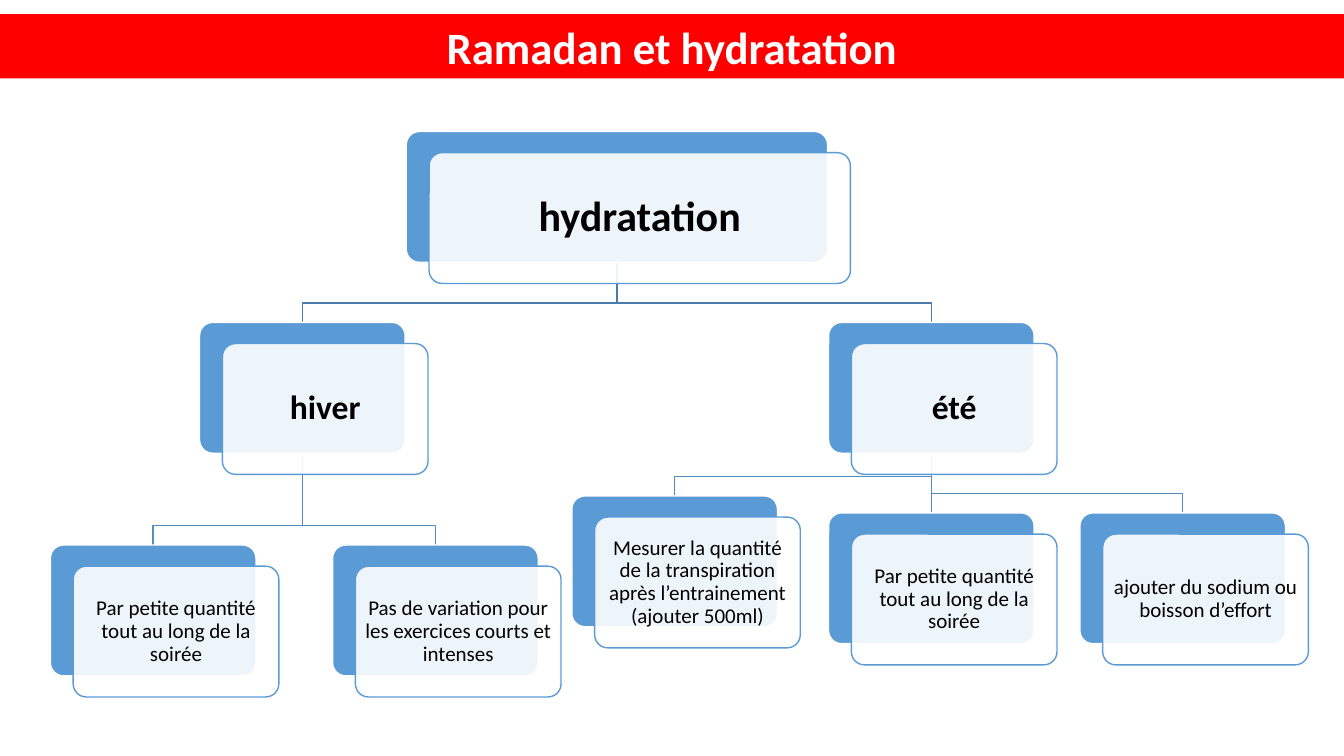
"""Build a slide with a hierarchy chart about hydration during Ramadan."""
from dataclasses import dataclass

from lxml.etree import SubElement
from pptx import Presentation
from pptx.dml.color import RGBColor
from pptx.enum.shapes import MSO_CONNECTOR, MSO_SHAPE
from pptx.enum.text import MSO_ANCHOR, MSO_AUTO_SIZE, PP_ALIGN
from pptx.oxml.ns import qn
from pptx.util import Inches, Pt

TITLE = "Ramadan et hydratation"
SIPS = "Par petite quantité tout au long de la soirée"

# Each node: text, centre column, top row, children (grid of 100 by 100).
TREE = ("hydratation", 45.9, 17.4, [
    ("hiver", 22.5, 42.65, [
        (SIPS, 11.4, 72.1, []),
        ("Pas de variation pour les exercices courts et intenses",
         32.4, 72.1, []),
    ]),
    ("été", 69.3, 42.65, [
        ("Mesurer la quantité de la transpiration après l’entrainement "
         "(ajouter 500ml)", 50.2, 65.6, []),
        (SIPS, 69.3, 67.85, []),
        ("ajouter du sodium ou boisson d’effort", 88, 67.85, []),
    ]),
])


@dataclass(frozen=True)
class Theme:
    """Colours, type sizes and insets by tree level."""
    font: str = "Calibri"
    white: str = "FFFFFF"
    black: str = "000000"
    band: str = "FF0000"
    card: str = "5B9BD5"
    links: tuple = ("497CAB", "538DC1")
    title: int = 32
    sizes: tuple = (30, 24, 15)
    pads: tuple = (0.12, 0.1, 0.06)
    veil: int = 90


LOOK = Theme()
WIDE, HIGH = Inches(13.33), Inches(7.5)
CARD_W = (31.35, 15.3, 15.3)
CARD_H = 17.3
SHIFT_X, SHIFT_Y = 1.7, 2.8
BEND = 2.55


def col(share):
    """Turn a column share into a length."""
    return round(WIDE * share / 100)


def row(share):
    """Turn a row share into a length."""
    return round(HIGH * share / 100)


def color(code):
    """Read a colour code."""
    return RGBColor.from_string(code)


def write(shape, text, size, bold, ink, pad, space):
    """Set centred text in a shape."""
    frame = shape.text_frame
    frame.text = text
    frame.word_wrap = True
    frame.auto_size = MSO_AUTO_SIZE.NONE
    frame.vertical_anchor = MSO_ANCHOR.MIDDLE
    frame.margin_left = frame.margin_right = Inches(pad)
    frame.margin_top = frame.margin_bottom = Inches(pad)
    line = frame.paragraphs[0]
    line.alignment = PP_ALIGN.CENTER
    line.line_spacing = space
    font = line.runs[0].font
    font.name, font.size, font.bold = LOOK.font, Pt(size), bold
    font.color.rgb = color(ink)


def add_title(slide):
    """Turn the title placeholder into the red band."""
    band = slide.shapes.title
    band.left, band.top = 0, row(1.87)
    band.width, band.height = WIDE, row(8.5)
    band.fill.solid()
    band.fill.fore_color.rgb = color(LOOK.band)
    write(band, TITLE, LOOK.title, True, LOOK.white, 0.05, 1.0)


def add_link(shapes, node, child, level):
    """Join a node to its child, with a bend if they are not aligned."""
    x, y = col(node[1]), row(node[2] + CARD_H)
    end_x, end_y = col(child[1]), row(child[2])
    if x == end_x:
        link = shapes.add_connector(MSO_CONNECTOR.STRAIGHT, x, y, x, end_y)
        SubElement(link.element.spPr, qn("a:effectLst"))
    else:
        bend = row(child[2] - BEND)
        path = shapes.build_freeform(x, y)
        path.add_line_segments(
            [(x, bend), (end_x, bend), (end_x, end_y)], close=False)
        link = path.convert_to_shape()
        link.fill.background()
        link.shadow.inherit = False
    link.line.color.rgb = color(LOOK.links[level])
    link.line.width = Pt(1)


def add_links(shapes, node, level=0):
    """Draw the links of a branch, deepest first."""
    for child in reversed(node[3]):
        add_links(shapes, child, level + 1)
    for child in reversed(node[3]):
        add_link(shapes, node, child, level)


def add_card(shapes, x, y, width, fill, edge):
    """Draw one rounded card."""
    card = shapes.add_shape(MSO_SHAPE.ROUNDED_RECTANGLE,
                            col(x), row(y), col(width), row(CARD_H))
    card.adjustments[0] = 0.1
    card.shadow.inherit = False
    card.fill.solid()
    card.fill.fore_color.rgb = color(fill)
    card.line.color.rgb = color(edge)
    card.line.width = Pt(1)
    return card


def add_node(shapes, node, level=0):
    """Draw a node as two offset cards, then its children."""
    text, mid, top, kids = node
    width = CARD_W[level]
    left = mid - width / 2
    add_card(shapes, left, top, width, LOOK.card, LOOK.white)
    front = add_card(shapes, left + SHIFT_X, top + SHIFT_Y, width,
                     LOOK.white, LOOK.card)
    tint = front.element.spPr.find(qn("a:solidFill"))[0]
    SubElement(tint, qn("a:alpha"), val=str(LOOK.veil * 1000))
    write(front, text, LOOK.sizes[level], level < 2, LOOK.black,
          LOOK.pads[level], 0.9)
    for child in kids:
        add_node(shapes, child, level + 1)


def main():
    """Build and save the slide."""
    deck = Presentation()
    deck.slide_width, deck.slide_height = WIDE, HIGH
    slide = deck.slides.add_slide(deck.slide_layouts[5])
    add_title(slide)
    add_links(slide.shapes, TREE)
    add_node(slide.shapes, TREE)
    deck.save("out.pptx")


if __name__ == "__main__":
    main()
